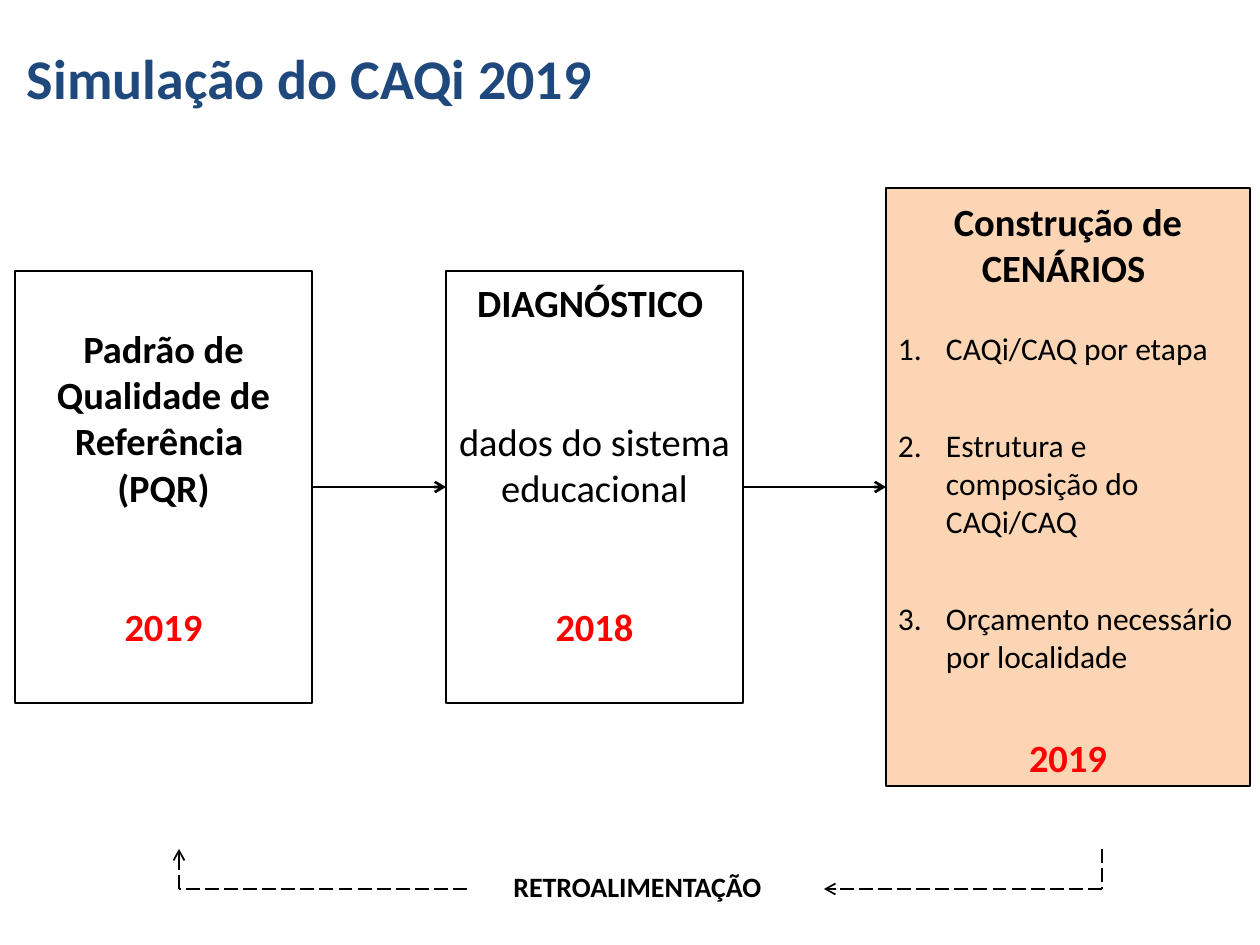
from dataclasses import dataclass
from itertools import pairwise

from lxml.etree import SubElement
from pptx import Presentation
from pptx.dml.color import RGBColor
from pptx.enum.dml import MSO_LINE
from pptx.enum.shapes import MSO_CONNECTOR, MSO_SHAPE
from pptx.enum.text import MSO_ANCHOR, PP_ALIGN
from pptx.oxml.ns import qn
from pptx.util import Emu, Pt

SCALE = 914400 / 126
BLACK, RED, NAVY, PEACH = "000000", "FF0000", "1F497D", "FCD5B5"


@dataclass
class Para:
    text: str
    size: int = 22
    bold: bool = True
    color: str = BLACK
    gap: int = 0  # points above
    align: PP_ALIGN = PP_ALIGN.CENTER
    listed: bool = False


@dataclass
class Box:
    left: int
    top: int
    width: int
    height: int
    inset: int  # above the first line
    paras: list[Para]
    fill: str | None = None
    line: float = 1


def px(num: int) -> Emu:
    return Emu(round(num * SCALE))


def rgb(code: str) -> RGBColor:
    return RGBColor.from_string(code)


def apply(item, values: dict) -> None:
    for name, value in values.items():
        setattr(item, name, value)


def write(shape, paras: list[Para], inset: int) -> None:
    frame = shape.text_frame
    apply(frame, {
        "word_wrap": True, "vertical_anchor": MSO_ANCHOR.TOP,
        "margin_left": px(12), "margin_right": px(12),
        "margin_top": px(inset), "margin_bottom": px(6),
    })
    for i, para in enumerate(paras):
        par = frame.add_paragraph() if i else frame.paragraphs[0]
        apply(par, {"alignment": para.align, "space_before": Pt(para.gap)})
        if para.listed:
            props = par._p.get_or_add_pPr()
            props.set("marL", str(px(48)))
            props.set("indent", str(px(-48)))
            SubElement(props, qn("a:buFont"), typeface="+mj-lt")
            SubElement(props, qn("a:buAutoNum"), type="arabicPeriod")
        run = par.add_run()
        run.text = para.text
        apply(run.font, {"name": "Calibri", "size": Pt(para.size), "bold": para.bold})
        run.font.color.rgb = rgb(para.color)


def add_text(slide, left: int, top: int, width: int, height: int, para: Para) -> None:
    area = slide.shapes.add_textbox(px(left), px(top), px(width), px(height))
    write(area, [para], 6)


def add_box(slide, box: Box):
    shape = slide.shapes.add_shape(
        MSO_SHAPE.RECTANGLE, px(box.left), px(box.top), px(box.width), px(box.height))
    shape.shadow.inherit = False
    if box.fill:
        shape.fill.solid()
        shape.fill.fore_color.rgb = rgb(box.fill)
    else:
        shape.fill.background()
    shape.line.color.rgb = rgb(BLACK)
    shape.line.width = Pt(box.line)
    write(shape, box.paras, box.inset)
    return shape


def add_line(slide, start: tuple[int, int], end: tuple[int, int],
             width: float, dashed: bool = False, arrow: bool = True):
    line = slide.shapes.add_connector(
        MSO_CONNECTOR.STRAIGHT, *map(px, start), *map(px, end))
    line.line.color.rgb = rgb(BLACK)
    line.line.width = Pt(width)
    if dashed:
        line.line.dash_style = MSO_LINE.LONG_DASH
    if arrow:
        SubElement(line.line._get_or_add_ln(), qn("a:tailEnd"), type="arrow")
    SubElement(line._element.spPr, qn("a:effectLst"))
    return line


def step(text: str, gap: int) -> Para:
    return Para(text, 18, False, gap=gap, align=PP_ALIGN.LEFT, listed=True)


BOXES = [
    Box(15, 271, 297, 432, 54, [
        Para("Padrão de Qualidade de Referência "),
        Para("(PQR)"),
        Para("2019", color=RED, gap=53),
    ]),
    Box(446, 271, 297, 432, 8, [
        Para("DIAGNÓSTICO "),
        Para("dados do sistema educacional", bold=False, gap=53),
        Para("2018", color=RED, gap=53),
    ]),
    Box(886, 188, 364, 598, 10, [
        Para("Construção de CENÁRIOS "),
        step("CAQi/CAQ por etapa", 22),
        step("Estrutura e composição do CAQi/CAQ", 34),
        step("Orçamento necessário por localidade", 34),
        Para("2019", color=RED, gap=34),
    ], PEACH, 0.75),
]

# Feedback path: each ends in an arrowhead
LOOPS = [
    [(1102, 849), (1102, 889), (824, 889)],
    [(467, 889), (179, 889), (179, 849)],
]


def main() -> None:
    deck = Presentation()
    deck.slide_width, deck.slide_height = px(1260), px(945)
    slide = deck.slides.add_slide(deck.slide_layouts[6])

    # Title
    add_text(slide, 15, 37, 1126, 81,
             Para("Simulação do CAQi 2019", 32, color=NAVY, align=PP_ALIGN.LEFT))

    # Feedback loop and its label
    for loop in LOOPS:
        for start, end in pairwise(loop):
            add_line(slide, start, end, 1, dashed=True, arrow=end == loop[-1])
    add_text(slide, 494, 864, 287, 47, Para("RETROALIMENTAÇÃO", 16))

    # Stages, joined left to right
    shapes = [add_box(slide, box) for box in BOXES]
    for prev, following in pairwise(shapes):
        link = add_line(slide, (0, 0), (1, 1), 1.5)
        link.begin_connect(prev, 3)
        link.end_connect(following, 1)

    deck.save("out.pptx")


if __name__ == "__main__":
    main()
